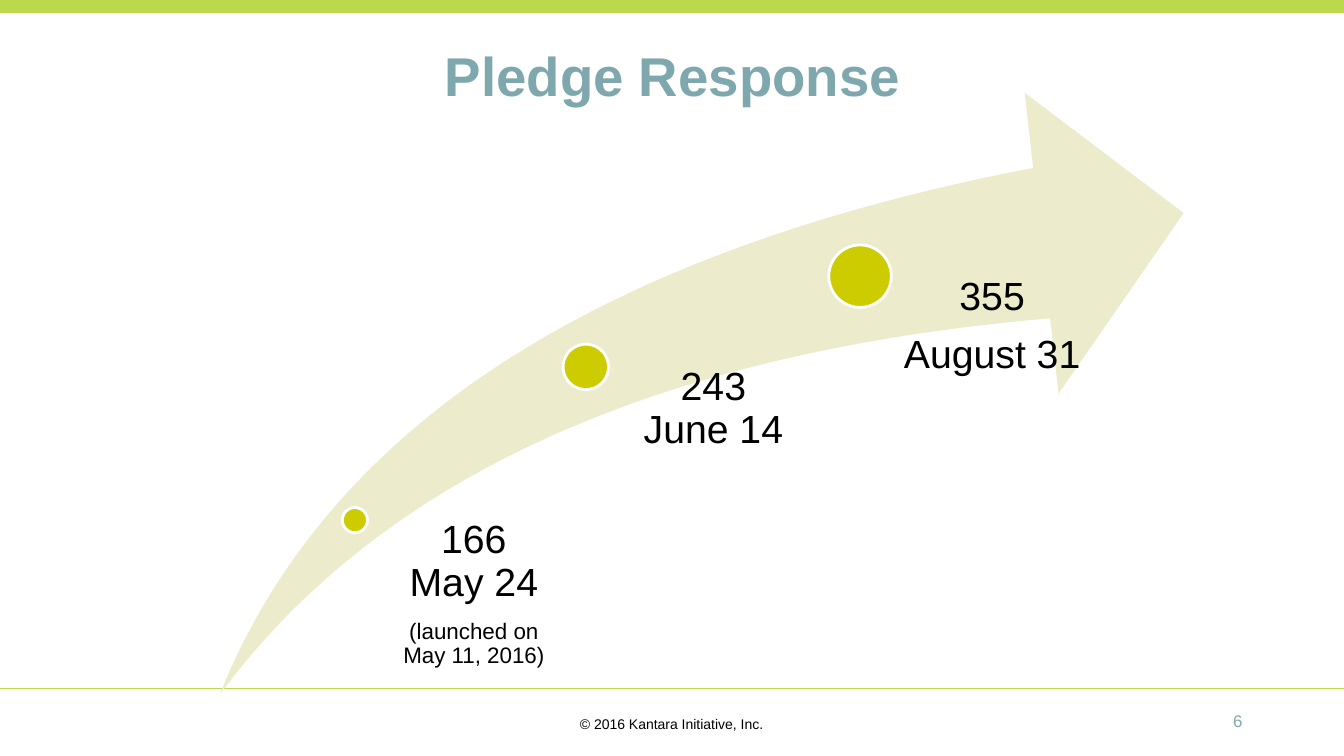
import pptx
import pptx.util
import pptx.dml.color
import pptx.enum.shapes
import pptx.enum.text
import pptx.oxml.ns
from lxml import etree

Inches, Pt = pptx.util.Inches, pptx.util.Pt
SHAPE = pptx.enum.shapes.MSO_SHAPE
ALIGN = pptx.enum.text.PP_ALIGN
ANCHOR = pptx.enum.text.MSO_ANCHOR

WIDTH, HEIGHT = 13.33, 7.5
LIME, TEAL, BLACK, WHITE = "BAD94B", "7EA8AD", "000000", "FFFFFF"
SWOOSH_FILL, MARKER_FILL = "ECECCC", "CCCC00"

# Marker centre x, centre y, diameter; label left, width, left inset; paragraphs with sizes
MILESTONES = [
    (3.52, 5.16, 0.25, 3.52, 2.23, 0.13,
     [("166\nMay 24", 28), ("(launched on\nMay 11, 2016)", 16)]),
    (5.81, 3.64, 0.45, 5.81, 2.29, 0.24, [("243\nJune 14", 28)]),
    (8.53, 2.74, 0.62, 8.22, 2.91, 0.33, [("355", 28), ("August 31", 28)]),
]


def rgb(value):
    return pptx.dml.color.RGBColor.from_string(value)


def add_shape(slide, kind, left, top, width, height, fill, outline=None):
    shape = slide.shapes.add_shape(
        kind, Inches(left), Inches(top), Inches(width), Inches(height))
    shape.shadow.inherit = False
    shape.fill.solid()
    shape.fill.fore_color.rgb = rgb(fill)
    if outline:
        shape.line.color.rgb = rgb(outline)
        shape.line.width = Pt(2)
    else:
        shape.line.fill.background()
    return shape


def add_text(slide, left, top, width, height, paragraphs, color=BLACK,
             align=ALIGN.CENTER, anchor=ANCHOR.TOP, bold=False):
    """Add a wrapping text box from (text, size) pairs and return its frame."""
    box = slide.shapes.add_textbox(
        Inches(left), Inches(top), Inches(width), Inches(height))
    frame = box.text_frame
    frame.word_wrap = True
    frame.vertical_anchor = anchor
    for index, (text, size) in enumerate(paragraphs):
        paragraph = frame.add_paragraph() if index else frame.paragraphs[0]
        paragraph.text = text
        paragraph.alignment = align
        for run in paragraph.runs:
            run.font.name = "Arial"
            run.font.size = Pt(size)
            run.font.bold = bold
            run.font.color.rgb = rgb(color)
    return frame


def add_header(slide, left, top, width):
    add_shape(slide, SHAPE.RECTANGLE, left, top, width, 0.13, LIME)
    add_text(slide, left + 0.67, top + 0.17, 12, 1.15, [("Pledge Response", 39)],
             TEAL, anchor=ANCHOR.MIDDLE, bold=True)


def add_footer(slide, left, top, width):
    rule = slide.shapes.add_connector(
        pptx.enum.shapes.MSO_CONNECTOR.STRAIGHT,
        Inches(left), Inches(top), Inches(left + width), Inches(top))
    rule.line.color.rgb = rgb(LIME)
    rule.line.width = Pt(0.5)
    etree.SubElement(rule._element.spPr, pptx.oxml.ns.qn("a:effectLst"))
    add_text(slide, left + 5.62, top + 0.22, 2.08, 0.27,
             [("© 2016 Kantara Initiative, Inc.", 10)])
    add_text(slide, left + 9.42, top + 0.12, 3, 0.4, [("6", 12)],
             TEAL, ALIGN.RIGHT, ANCHOR.MIDDLE)


def add_growth_arrow(slide, left, top, width, height):
    """Draw the swoosh with its milestones; labels run down to its lower edge."""
    swoosh = add_shape(slide, SHAPE.SWOOSH_ARROW, left, top, width, height, SWOOSH_FILL)
    swoosh.adjustments[0] = swoosh.adjustments[1] = 0.25
    for x, y, diameter, label_left, label_width, inset, label in MILESTONES:
        add_shape(slide, SHAPE.OVAL, x - diameter / 2, y - diameter / 2,
                  diameter, diameter, MARKER_FILL, WHITE)
        frame = add_text(slide, label_left, y, label_width, top + height - y, label)
        frame.margin_left = Inches(inset)
        frame.margin_top = frame.margin_right = frame.margin_bottom = 0
        for paragraph, (_, size) in zip(frame.paragraphs, label):
            paragraph.line_spacing = 0.9
            paragraph.space_after = Pt(0.4 * size)


def main():
    deck = pptx.Presentation()
    deck.slide_width, deck.slide_height = Inches(WIDTH), Inches(HEIGHT)
    slide = deck.slides.add_slide(deck.slide_layouts[6])
    add_footer(slide, 0, 6.83, WIDTH)
    add_header(slide, 0, 0, WIDTH)
    add_growth_arrow(slide, 2.18, 0.92, 9.56, 5.97)
    deck.save("out.pptx")


if __name__ == "__main__":
    main()
